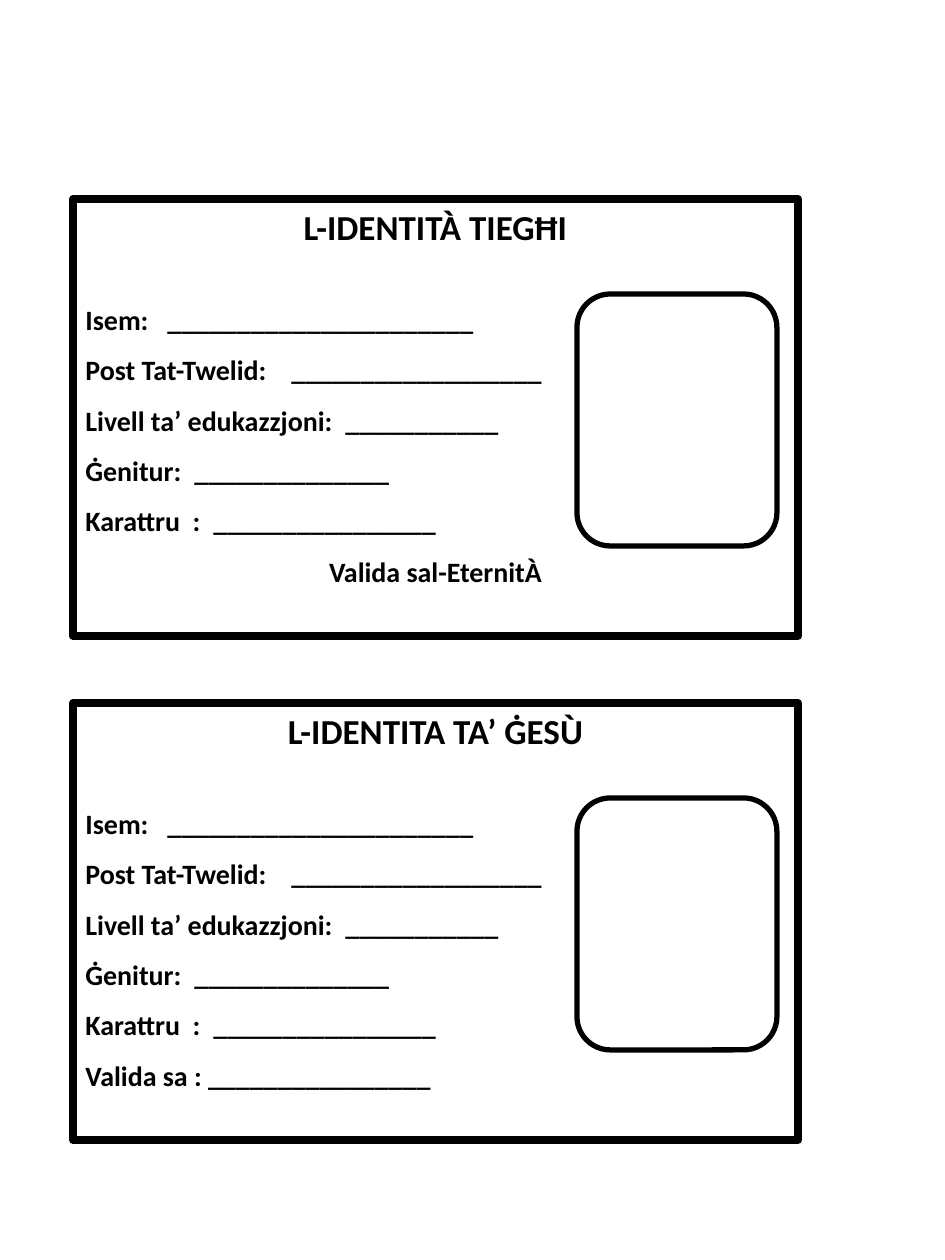
from lxml import etree
from pptx import Presentation
from pptx.dml.color import RGBColor
from pptx.enum.shapes import MSO_SHAPE
from pptx.enum.text import PP_ALIGN
from pptx.oxml.ns import qn
from pptx.util import Pt

PX = 914400 // 126
ROUNDED = MSO_SHAPE.ROUNDED_RECTANGLE
CENTER, LEFT = PP_ALIGN.CENTER, PP_ALIGN.LEFT

THEME = {
    "font": "Calibri",
    "ink": RGBColor(0, 0, 0),
    "paper": RGBColor(255, 255, 255),
    "title": Pt(20),
    "field": Pt(16),
    "title_gap": Pt(22),
    "card_line": Pt(4.5),
    "photo_line": Pt(3),
}

# Label, number of underscores, tab stop in px
FIELDS = [
    ("Isem:", 22, 82),
    ("Post Tat-Twelid:", 18, 206),
    ("Livell ta’ edukazzjoni:", 11, 260),
    ("Ġenitur:", 14, 109),
    ("Karattru  :", 16, 128),
]

# Title, closing line, its alignment
CARDS = [
    ("L-IDENTITÀ TIEGĦI", "Valida sal-EternitÀ", CENTER),
    ("L-IDENTITA TA’ ĠESÙ", "Valida sa : " + "_" * 16, LEFT),
]
CARD_LEFT, CARD_TOP, CARD_WIDTH, CARD_HEIGHT = 73, 199, 725, 437
CARD_STEP = 504
PHOTO_LEFT, PHOTO_OFFSET, PHOTO_WIDTH, PHOTO_HEIGHT = 577, 95, 200, 252


def write(paragraph, text, size, alignment):
    paragraph.alignment = alignment
    run = paragraph.add_run()
    run.text = text
    run.font.name = THEME["font"]
    run.font.size = size
    run.font.bold = True
    run.font.color.rgb = THEME["ink"]


def add_tab_stop(paragraph, position):
    properties = paragraph._p.get_or_add_pPr()
    tabs = etree.SubElement(properties, qn("a:tabLst"))
    etree.SubElement(tabs, qn("a:tab"), pos=str(position * PX), algn="l")


presentation = Presentation()
presentation.slide_width = 945 * PX
presentation.slide_height = 1260 * PX
slide = presentation.slides.add_slide(presentation.slide_layouts[6])

for index, (title, closing, closing_alignment) in enumerate(CARDS):
    top = CARD_TOP + index * CARD_STEP
    card = slide.shapes.add_textbox(
        CARD_LEFT * PX, top * PX, CARD_WIDTH * PX, CARD_HEIGHT * PX)
    card.line.color.rgb = THEME["ink"]
    card.line.width = THEME["card_line"]
    frame = card.text_frame
    frame.word_wrap = True
    write(frame.paragraphs[0], title, THEME["title"], CENTER)

    for row, (label, blanks, tab_stop) in enumerate(FIELDS):
        paragraph = frame.add_paragraph()
        paragraph.line_spacing = 1.5
        if row == 0:
            paragraph.space_before = THEME["title_gap"]
        add_tab_stop(paragraph, tab_stop)
        write(paragraph, label + "\t" + "_" * blanks, THEME["field"], LEFT)

    paragraph = frame.add_paragraph()
    paragraph.line_spacing = 1.5
    write(paragraph, closing, THEME["field"], closing_alignment)

    photo = slide.shapes.add_shape(
        ROUNDED, PHOTO_LEFT * PX, (top + PHOTO_OFFSET) * PX,
        PHOTO_WIDTH * PX, PHOTO_HEIGHT * PX)
    photo.shadow.inherit = False
    photo.fill.solid()
    photo.fill.fore_color.rgb = THEME["paper"]
    photo.line.color.rgb = THEME["ink"]
    photo.line.width = THEME["photo_line"]

presentation.save("out.pptx")
